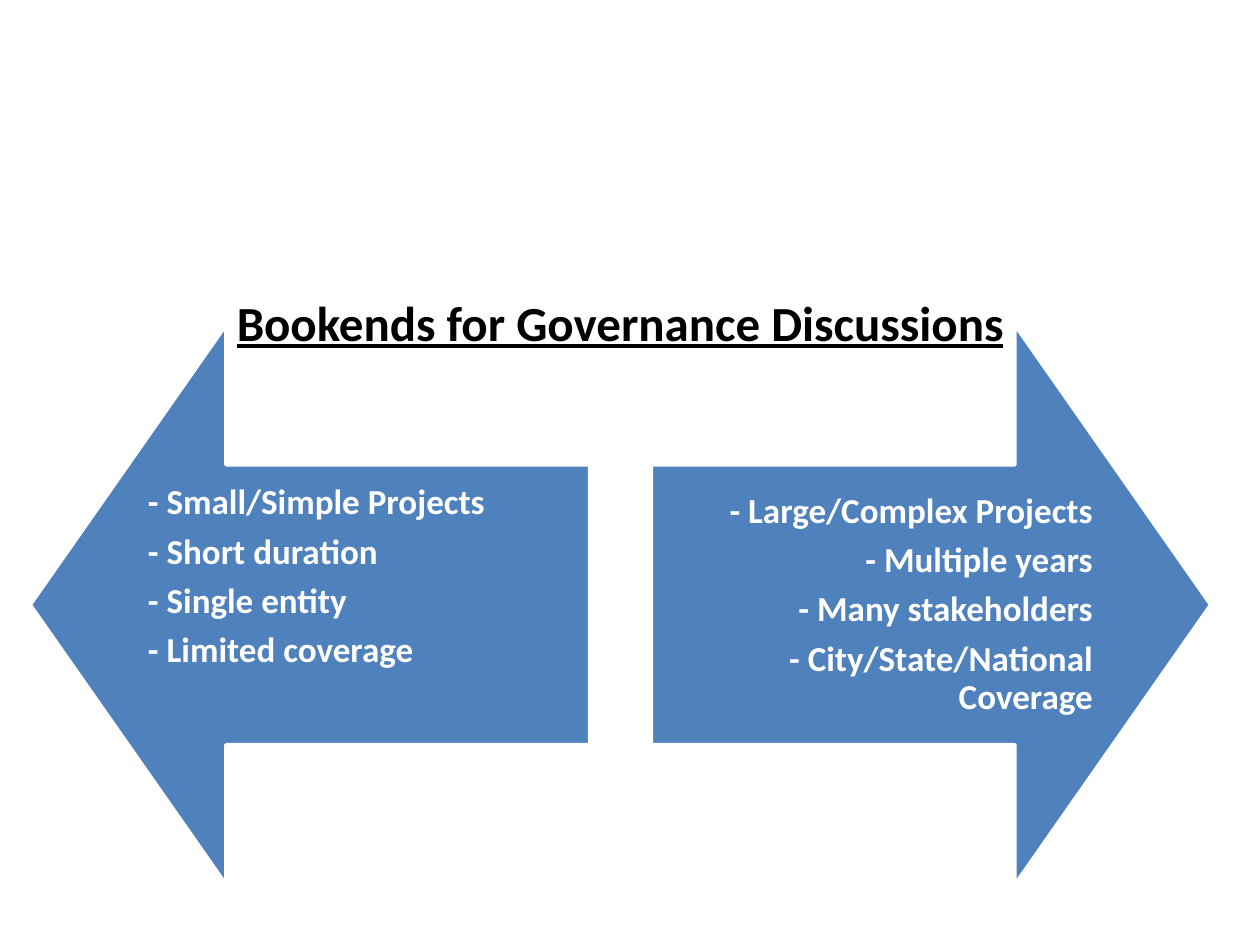
"""Build a slide with two opposed arrows as bookends for governance."""
import pptx
import pptx.dml.color
import pptx.enum.shapes
import pptx.enum.text
import pptx.util

Pt = pptx.util.Pt
Align = pptx.enum.text.PP_ALIGN
Anchor = pptx.enum.text.MSO_ANCHOR
Fit = pptx.enum.text.MSO_AUTO_SIZE


def color(code):
    return pptx.dml.color.RGBColor.from_string(code)


def assign(item, values):
    for name, value in values.items():
        setattr(item, name, value)


class Board:
    blue, white, black = "4F81BD", "FFFFFF", "000000"
    face = {"name": "Calibri", "bold": True}
    item = {"line_spacing": 0.9, "space_after": Pt(6.6)}

    def __init__(self, slide):
        self.slide = slide

    def arrow(self, left, top, size, turn):
        kind = pptx.enum.shapes.MSO_SHAPE.UP_ARROW
        shape = self.slide.shapes.add_shape(kind, Pt(left), Pt(top), Pt(size), Pt(size))
        shape.rotation = turn
        shape.adjustments[0], shape.adjustments[1] = 0.5, 0.35
        shape.shadow.inherit = False
        shape.fill.solid()
        shape.fill.fore_color.rgb = color(self.blue)
        shape.line.color.rgb = color(self.white)
        shape.line.width = Pt(2)

    def text(self, area, lines, tint, font, frame, para):
        box = self.slide.shapes.add_textbox(*map(Pt, area)).text_frame
        assign(box, frame)
        for index, line in enumerate(lines):
            part = box.add_paragraph() if index else box.paragraphs[0]
            assign(part, para)
            run = part.add_run()
            run.text = line
            assign(run.font, self.face | font)
            run.font.color.rgb = color(tint)

    def title(self, area, words):
        frame = {"word_wrap": False, "auto_size": Fit.SHAPE_TO_FIT_TEXT}
        font = {"size": Pt(28), "underline": True}
        self.text(area, [words], self.black, font, frame, {})

    def points(self, area, lines, align, anchor):
        sides = ("left", "top", "right", "bottom")
        frame = {f"margin_{side}": Pt(11.2) for side in sides}
        frame |= {"word_wrap": True, "vertical_anchor": anchor}
        para = self.item | {"alignment": align}
        self.text(area, lines, self.white, {"size": Pt(20)}, frame, para)


def main():
    deck = pptx.Presentation()
    deck.slide_width, deck.slide_height = Pt(720), Pt(540)
    board = Board(deck.slides.add_slide(deck.slide_layouts[6]))
    top, size, width = 185.8, 319.6, 263.5
    small = ["- Small/Simple Projects", "- Short duration",
             "- Single entity", "- Limited coverage"]
    large = ["- Large/Complex Projects", "- Multiple years",
             "- Many stakeholders", "- City/State/National Coverage"]
    ends = [(17.3, 270, size - width, small, Align.LEFT, Anchor.TOP),
            (372.2, 90, 0, large, Align.RIGHT, Anchor.MIDDLE)]
    for left, turn, shift, lines, align, anchor in ends:
        board.arrow(left, top, size, turn)
        area = (left + shift, top + size / 4, width, size / 2)
        board.points(area, lines, align, anchor)
    board.title((128.2, 163.4, 457.2, 41), "Bookends for Governance Discussions")
    deck.save("out.pptx")


if __name__ == "__main__":
    main()
